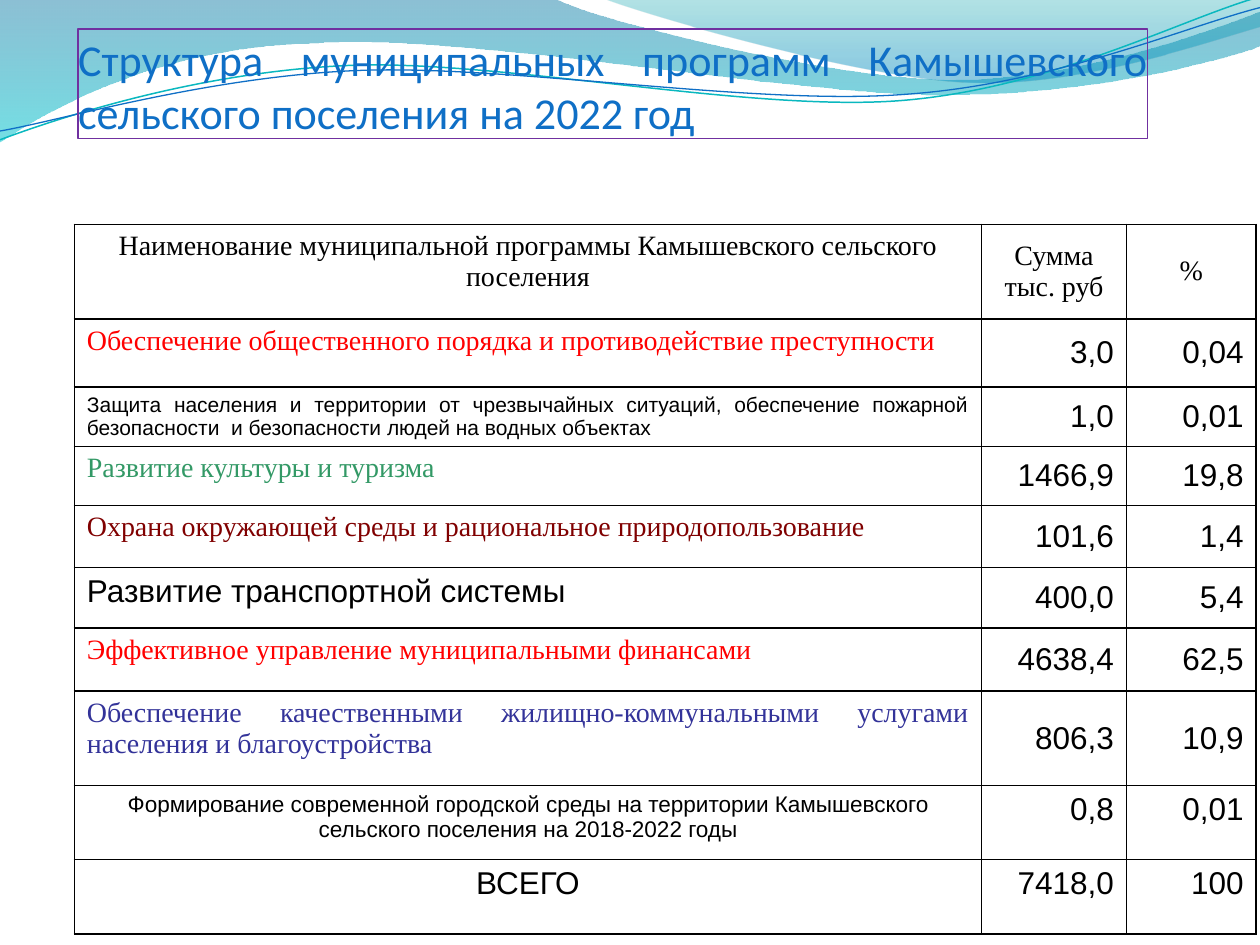
from math import cos, radians, sin

from lxml.etree import SubElement
from pptx import Presentation
from pptx.dml.color import RGBColor
from pptx.enum.shapes import MSO_SHAPE
from pptx.enum.text import MSO_ANCHOR, PP_ALIGN
from pptx.oxml import parse_xml
from pptx.oxml.ns import nsdecls, qn
from pptx.util import Inches, Pt

BLACK = RGBColor(0x00, 0x00, 0x00)
RED = RGBColor(0xFF, 0x00, 0x00)
GREEN = RGBColor(0x33, 0x99, 0x66)
MAROON = RGBColor(0x80, 0x00, 0x00)
INDIGO = RGBColor(0x33, 0x33, 0x99)
BLUE = RGBColor(0x0F, 0x6F, 0xC6)
PURPLE = RGBColor(0x70, 0x30, 0xA0)
CYAN = RGBColor(0x0A, 0xB8, 0xBF)
DEEP_BLUE = RGBColor(0x00, 0x74, 0xA1)
AQUA = RGBColor(0x00, 0xC6, 0xCF)
TEAL = RGBColor(0x00, 0xA1, 0xA9)
SKY = RGBColor(0x00, 0x8B, 0xBF)
SERIF, SANS = "Times New Roman", "Arial"
LINE_TILT = -2.7

deck = Presentation()
deck.slide_width, deck.slide_height = Inches(10), Inches(7.5)
page = deck.slides.add_slide(deck.slide_layouts[6])


def add_wave(box, segments, tilt=0, closed=False):
    """Draw slide points (one pair) and Bezier curves (three pairs) in a tilted box."""
    left, top, width, height = box
    builder = page.shapes.build_freeform(Inches(left), Inches(top))
    builder.add_line_segments([(Inches(left + width), Inches(top + height))], close=False)
    wave = builder.convert_to_shape()
    wave.shadow.inherit = False
    wave.rotation = tilt % 360
    outline = next(wave._element.spPr.iter(qn("a:path")))
    for element in list(outline):
        outline.remove(element)
    turn = radians(-tilt)
    for index, segment in enumerate(segments):
        kind = "a:moveTo" if index == 0 else "a:lnTo" if len(segment) == 2 else "a:cubicBezTo"
        command = SubElement(outline, qn(kind))
        for x, y in zip(segment[::2], segment[1::2]):
            dx, dy = x - left - width / 2, y - top - height / 2
            local_x = width / 2 + dx * cos(turn) - dy * sin(turn)
            local_y = height / 2 + dx * sin(turn) + dy * cos(turn)
            SubElement(command, qn("a:pt"), x=str(Inches(local_x)), y=str(Inches(local_y)))
    if closed:
        SubElement(outline, qn("a:close"))
    return wave


def format_text(para, align, font, size, color):
    para.alignment = align
    for span in para.runs:
        span.font.name, span.font.size = font, Pt(size)
        span.font.color.rgb = color


# Translucent waves: box, outline, then (position, colour, opacity in percent) per stop
filled_waves = [
    ((-0.01, -0.01, 10.02, 1.14),
     [(0, 0), (4.4, -0.01), (4.76, 0.17, 6.64, 0.63, 7.58, 0.63),
      (8.53, 0.63, 9.58, 0.26, 10, 0.09), (10.01, 0.36),
      (9.83, 0.44, 8.7, 0.76, 7.46, 0.75), (6.22, 0.75, 3.82, 0.28, 2.57, 0.34),
      (1.29, 0.36, 0.46, 0.83, -0.01, 1.13), (0, 0)],
     [(0, DEEP_BLUE, 45), (1, AQUA, 55)]),
    ((4.79, -0.01, 5.21, 0.7),
     [(4.79, -0.01), (5.09, 0.11, 6.82, 0.62, 7.69, 0.65),
      (8.56, 0.69, 9.61, 0.32, 10, 0.21), (10, 0), (4.79, -0.01)],
     [(0, TEAL, 30), (0.8, SKY, 45)]),
]
for box, outline, stops in filled_waves:
    wave = add_wave(box, outline, closed=True)
    wave.line.fill.background()
    wave.fill.gradient()
    wave.fill.gradient_angle = 270
    for stop, (position, color, _) in zip(wave.fill.gradient_stops, stops):
        stop.position, stop.color.rgb = position, color
    colors = wave._element.spPr.iter(qn("a:srgbClr"))
    for element, (_, _, opacity) in zip(list(colors), stops):
        SubElement(element, qn("a:alpha"), val=str(opacity * 1000))

# Thin wave lines
wave_lines = [
    ((-0.02, 0.22, 10.02, 0.71),
     [(0, 1.11), (0.48, 0.93, 1.58, 0.57, 2.77, 0.52),
      (3.95, 0.47, 5.93, 0.89, 7.13, 0.8), (8.33, 0.71, 9.38, 0.15, 9.98, -0.02)],
     CYAN, 0.85),
    ((-0.02, 0.3, 10.03, 0.58),
     [(0, 1.04), (0.47, 0.96, 1.64, 0.61, 2.83, 0.56),
      (4.03, 0.51, 5.97, 0.84, 7.17, 0.75), (8.36, 0.67, 9.41, 0.21, 10, 0.06)],
     BLUE, 0.75),
]
for box, outline, color, width in wave_lines:
    wave = add_wave(box, outline, tilt=LINE_TILT)
    wave.fill.background()
    wave.line.color.rgb, wave.line.width = color, Pt(width)

# Framed title
title = page.shapes.add_shape(MSO_SHAPE.RECTANGLE, Inches(0.62), Inches(0.23),
                              Inches(8.49), Inches(0.87))
title.shadow.inherit = False
title.fill.background()
title.line.color.rgb, title.line.width = PURPLE, Pt(0.75)
frame = title.text_frame
frame.word_wrap = True
frame.vertical_anchor = MSO_ANCHOR.BOTTOM
frame.margin_left = frame.margin_right = frame.margin_bottom = 0
frame.text = "Структура муниципальных программ Камышевского сельского поселения на 2022 год"
format_text(frame.paragraphs[0], PP_ALIGN.JUSTIFY, "Calibri", 25.2, BLUE)

# Programme rows: height, name, amount, share, then name alignment, font, size, colour
CENTER, JUSTIFY = PP_ALIGN.CENTER, PP_ALIGN.JUSTIFY
programmes = [
    (0.75, "Наименование муниципальной программы Камышевского сельского поселения",
     "Сумма тыс. руб", "%", CENTER, SERIF, 16, BLACK),
    (0.54, "Обеспечение общественного порядка и противодействие преступности",
     "3,0", "0,04", JUSTIFY, SERIF, 16, RED),
    (0.47, "Защита населения и территории от чрезвычайных ситуаций, обеспечение пожарной "
     "безопасности  и безопасности людей на водных объектах",
     "1,0", "0,01", JUSTIFY, SANS, 12, BLACK),
    (0.47, "Развитие культуры и туризма", "1466,9", "19,8", JUSTIFY, SERIF, 16, GREEN),
    (0.49, "Охрана окружающей среды и рациональное природопользование",
     "101,6", "1,4", JUSTIFY, SERIF, 16, MAROON),
    (0.48, "Развитие транспортной системы", "400,0", "5,4", JUSTIFY, SANS, 18, BLACK),
    (0.5, "Эффективное управление муниципальными финансами",
     "4638,4", "62,5", JUSTIFY, SERIF, 16, RED),
    (0.75, "Обеспечение качественными жилищно-коммунальными услугами населения и "
     "благоустройства", "806,3", "10,9", JUSTIFY, SERIF, 16, INDIGO),
    (0.59, "Формирование современной городской среды на территории Камышевского "
     "сельского поселения на 2018-2022 годы",
     "0,8", "0,01", CENTER, SANS, 12.9, BLACK),
    (0.59, "ВСЕГО", "7418,0", "100", CENTER, SANS, 18, BLACK),
]
column_widths = (7.2, 1.15, 1.03)
table = page.shapes.add_table(
    len(programmes), len(column_widths), Inches(0.59), Inches(1.78),
    Inches(sum(column_widths)), Inches(sum(row[0] for row in programmes))).table
table.first_row = table.horz_banding = False
for column, width in zip(table.columns, column_widths):
    column.width = Inches(width)

for r, (height, *texts, align, font, size, color) in enumerate(programmes):
    table.rows[r].height = Inches(height)
    for c, text in enumerate(texts):
        cell = table.cell(r, c)
        cell.text = text
        cell.fill.background()
        para = cell.text_frame.paragraphs[0]
        if c == 0 or r == 0:
            format_text(para, align, font, size, color)
        else:
            format_text(para, PP_ALIGN.RIGHT, SANS, 18, BLACK)
        # Figures are centred vertically except in the last two rows
        middle = c > 0 and r < len(programmes) - 2
        cell.vertical_anchor = MSO_ANCHOR.MIDDLE if middle else MSO_ANCHOR.TOP
        for index, side in enumerate(("lnL", "lnR", "lnT", "lnB")):
            border = parse_xml(
                f'<a:{side} {nsdecls("a")} w="{Pt(1)}"><a:solidFill>'
                f'<a:srgbClr val="{BLACK}"/></a:solidFill></a:{side}>')
            cell._tc.get_or_add_tcPr().insert(index, border)

deck.save("out.pptx")
